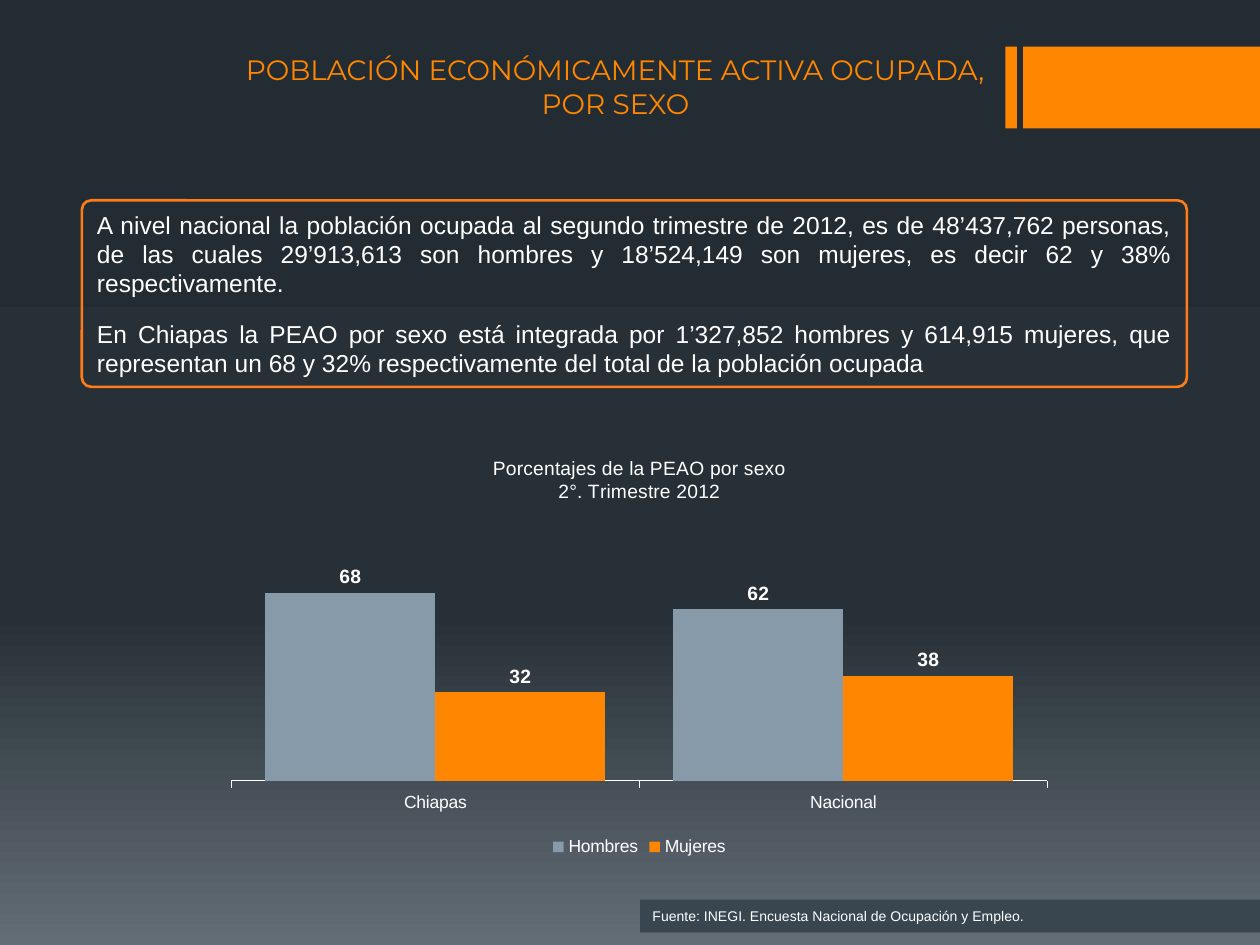
from lxml import etree
from pptx import Presentation
from pptx.chart.data import CategoryChartData
from pptx.dml.color import RGBColor
from pptx.enum.chart import XL_CHART_TYPE as ChartType, XL_LABEL_POSITION as LabelPos
from pptx.enum.chart import XL_LEGEND_POSITION as LegendPos, XL_TICK_MARK as Tick
from pptx.enum.shapes import MSO_SHAPE as Shape
from pptx.enum.text import MSO_ANCHOR as Anchor, PP_ALIGN as Align
from pptx.oxml import parse_xml
from pptx.oxml.ns import nsdecls, qn
from pptx.util import Inches, Pt

ORANGE, WHITE, GREY, SLATE = "FF8600", "FFFFFF", "869AA9", "394650"
BACKGROUND = [(0, "242C33"), (65, "273037"), (100, "636D76")]


def rgb(code):
    return RGBColor.from_string(code)


def set_font(font, size, color=WHITE, name="Arial", bold=False):
    font.name, font.size, font.bold = name, Pt(size), bold
    font.color.rgb = rgb(color)


def paint_background(slide):
    fill = slide.background.fill
    fill.gradient()
    fill.gradient_angle = 270
    stops = next(slide.element.iter(qn("a:gsLst")))
    for stop in list(stops):
        stops.remove(stop)
    for percent, color in BACKGROUND:
        stop = etree.SubElement(stops, qn("a:gs"), pos=str(percent * 1000))
        etree.SubElement(stop, qn("a:srgbClr"), val=color)


def add_panel(slide, box, fill=None, line=None, kind=Shape.RECTANGLE):
    panel = slide.shapes.add_shape(kind, *map(Inches, box))
    panel.shadow.inherit = False
    if fill:
        panel.fill.solid()
        panel.fill.fore_color.rgb = rgb(fill)
    else:
        panel.fill.background()
    if line:
        panel.line.color.rgb = rgb(line)
        panel.line.width = Pt(1.5)
    else:
        panel.line.fill.background()
    return panel


def write(shape, texts, size, align, anchor=Anchor.MIDDLE, gap=0, **font):
    frame = shape.text_frame
    frame.word_wrap = True
    frame.vertical_anchor = anchor
    frame.text = "\n".join(texts)
    for number, paragraph in enumerate(frame.paragraphs):
        paragraph.alignment = align
        paragraph.space_before = Pt(gap if number else 0)
        paragraph.space_after = Pt(gap)
        set_font(paragraph.font, size, **font)


def add_header(slide, box):
    left, top, width, height = box
    title_width, bar_width, gap = 6.09, 0.09, 0.05
    title = slide.shapes.add_textbox(*map(Inches, (left, top, title_width, height)))
    write(title, ["POBLACIÓN ECONÓMICAMENTE ACTIVA OCUPADA, POR SEXO"], 16,
          Align.CENTER, Anchor.TOP, color=ORANGE, name="Montserrat")
    bar_left = left + title_width + gap
    block_left = bar_left + bar_width + gap
    add_panel(slide, (bar_left, top, bar_width, height), ORANGE)
    add_panel(slide, (block_left, top, left + width - block_left, height), ORANGE)


def add_summary(slide, box):
    summary = add_panel(slide, box, line="FF7C19", kind=Shape.ROUNDED_RECTANGLE)
    summary.adjustments[0] = 0.05
    write(summary, [
        "A nivel nacional la población ocupada al segundo trimestre de 2012, es de "
        "48’437,762 personas, de las cuales 29’913,613 son hombres y 18’524,149 son "
        "mujeres, es decir 62 y 38% respectivamente.",
        "En Chiapas la PEAO por sexo está integrada por 1’327,852 hombres y 614,915 "
        "mujeres, que representan un 68 y 32% respectivamente del total de la "
        "población ocupada",
    ], 14, Align.JUSTIFY, gap=6)


def place_plot(chart, x, y, w, h):
    plot_area = chart.plots[0]._element.getparent()
    for old in plot_area.findall(qn("c:layout")):
        plot_area.remove(old)
    sizes = "".join(f'<c:{tag} val="{share}"/>' for tag, share in zip("xywh", (x, y, w, h)))
    plot_area.insert(0, parse_xml(
        f'<c:layout {nsdecls("c")}><c:manualLayout><c:layoutTarget val="inner"/>'
        f'<c:xMode val="edge"/><c:yMode val="edge"/>{sizes}</c:manualLayout></c:layout>'))


def add_sex_chart(slide, box):
    data = CategoryChartData(number_format="0")
    data.categories = ["Chiapas", "Nacional"]
    data.add_series("Hombres", (68, 62))
    data.add_series("Mujeres", (32, 38))
    chart = slide.shapes.add_chart(
        ChartType.COLUMN_CLUSTERED, *map(Inches, box), data).chart
    set_font(chart.font, 10)

    title = chart.chart_title.text_frame
    title.text = "Porcentajes de la PEAO por sexo\n2°. Trimestre 2012"
    for paragraph in title.paragraphs:
        set_font(paragraph.font, 11)
    chart.chart_title.include_in_layout = False

    chart.has_legend = True
    chart.legend.position = LegendPos.BOTTOM
    chart.legend.include_in_layout = False

    values = chart.value_axis
    values.minimum_scale, values.maximum_scale = 0, 80
    values.has_major_gridlines = False
    values.visible = False
    categories = chart.category_axis
    categories.major_tick_mark = Tick.OUTSIDE
    categories.format.line.color.rgb = rgb(WHITE)

    plot = chart.plots[0]
    plot.gap_width, plot.overlap = 40, 0
    plot.vary_by_categories = False
    for series, color in zip(plot.series, (GREY, ORANGE)):
        series.format.fill.solid()
        series.format.fill.fore_color.rgb = rgb(color)
        labels = series.data_labels
        labels.show_value = True
        labels.position = LabelPos.OUTSIDE_END
        labels.number_format, labels.number_format_is_linked = "0", False
        set_font(labels.font, 11, bold=True)
    place_plot(chart, 0.07, 0.29, 0.86, 0.52)


def add_source(slide, box):
    write(add_panel(slide, box, SLATE),
          ["Fuente: INEGI. Encuesta Nacional de Ocupación y Empleo."], 8, Align.JUSTIFY)


def main():
    deck = Presentation()
    deck.slide_width, deck.slide_height = Inches(10), Inches(7.5)
    slide = deck.slides.add_slide(deck.slide_layouts[6])
    paint_background(slide)
    add_header(slide, (1.84, 0.37, 8.16, 0.65))
    add_summary(slide, (0.65, 1.59, 8.77, 1.48))
    add_sex_chart(slide, (1.31, 3.46, 7.53, 3.38))
    add_source(slide, (5.08, 7.14, 4.92, 0.26))
    deck.save("out.pptx")


if __name__ == "__main__":
    main()
